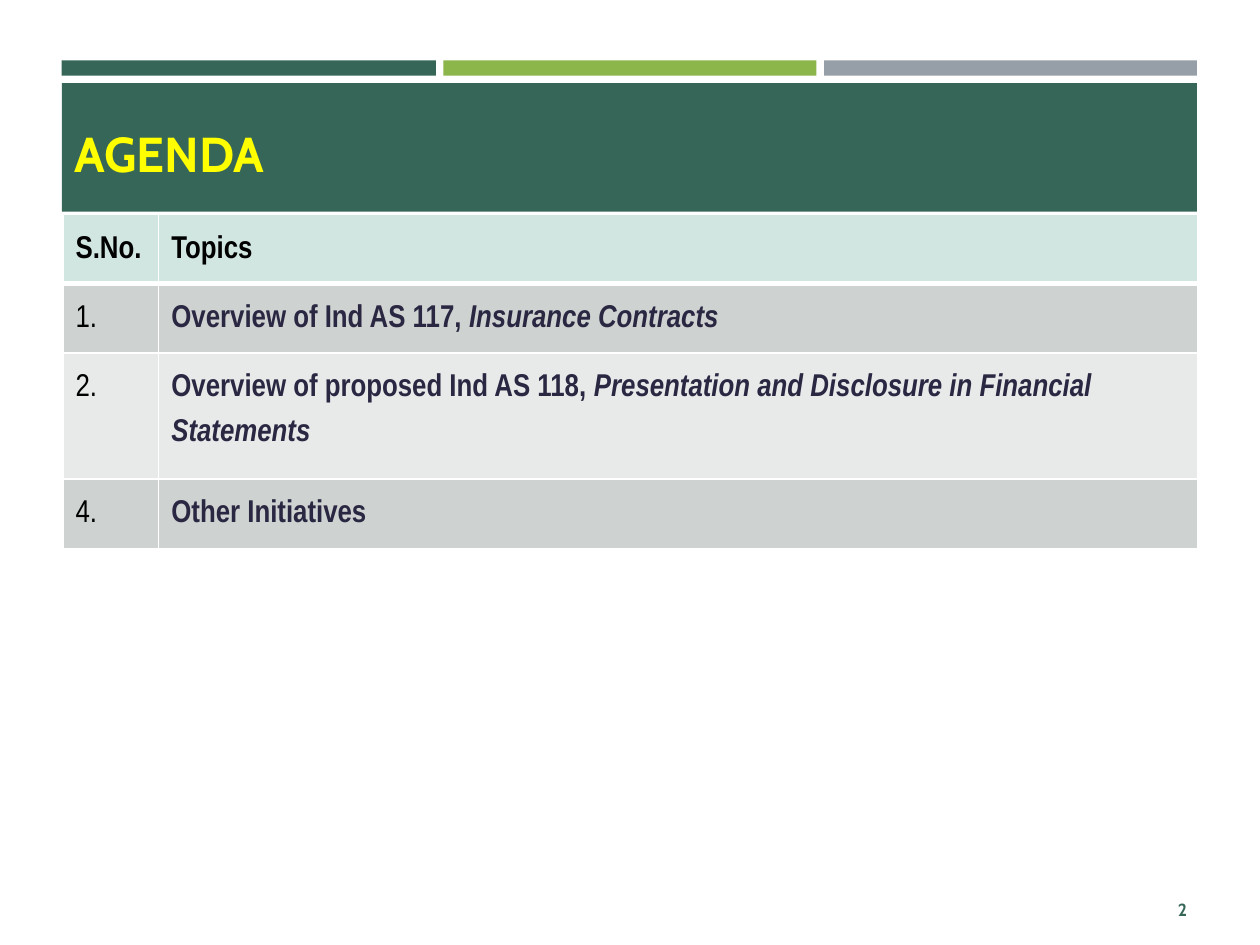
"""Build the agenda slide with a banner title and a table of topics."""
from lxml import etree
from pptx import Presentation
from pptx.dml.color import RGBColor
from pptx.enum.shapes import MSO_SHAPE
from pptx.enum.text import MSO_ANCHOR, PP_ALIGN
from pptx.oxml.ns import qn
from pptx.util import Inches, Pt

RECTANGLE = MSO_SHAPE.RECTANGLE
MIDDLE = MSO_ANCHOR.MIDDLE
LEFT, RIGHT = PP_ALIGN.LEFT, PP_ALIGN.RIGHT
GREEN = "366658"
NAVY = "2A2742"


def color(value):
    return RGBColor.from_string(value)


def style(font, name, size, value, bold, italic=False):
    font.name = name
    font.size = Pt(size)
    font.color.rgb = color(value)
    font.bold = bold
    font.italic = italic


deck = Presentation()
deck.slide_width, deck.slide_height = Inches(10), Inches(7.5)
page = deck.slides.add_slide(deck.slide_layouts[5])

bands = [
    (0.49, 0.48, 2.97, 0.12, GREEN),
    (3.52, 0.48, 2.96, 0.12, "8CB64A"),
    (6.54, 0.48, 2.96, 0.12, "969FA7"),
    (0.49, 0.66, 9.01, 1.02, GREEN),
]
for left, top, width, height, fill in bands:
    band = page.shapes.add_shape(RECTANGLE, Inches(left), Inches(top), Inches(width), Inches(height))
    band.shadow.inherit = False
    band.fill.solid()
    band.fill.fore_color.rgb = color(fill)
    band.line.fill.background()

title = page.shapes.title
band.element.addnext(title.element)
title.left, title.top = Inches(0.49), Inches(0.75)
title.width, title.height = Inches(7.79), Inches(0.93)
number = page.shapes.add_textbox(Inches(8.68), Inches(7.02), Inches(0.84), Inches(0.4))
labels = [
    (title, "AGENDA", 28, "FFFF00", LEFT),
    (number, "2", 10, GREEN, RIGHT),
]
for box, text, size, value, alignment in labels:
    frame = box.text_frame
    frame.text = text
    frame.word_wrap = True
    frame.vertical_anchor = MIDDLE
    para = frame.paragraphs[0]
    para.alignment = alignment
    style(para.runs[0].font, "Cabin", size, value, True)

topics = [
    ("S.No.", ["Topics"], 0.5, "D1E6E0"),
    ("1.", ["Overview of Ind AS 117, ", "Insurance Contracts"], 0.5, "CED3D1"),
    ("2.", ["Overview of proposed Ind AS 118, ",
            "Presentation and Disclosure in Financial Statements"], 0.8, "E8EAEA"),
    ("4.", ["Other Initiatives"], 0.5, "CED3D1"),
]
table = page.shapes.add_table(len(topics), 2, Inches(0.5), Inches(1.7), Inches(9.01), Inches(2.3)).table
table.columns[0].width = Inches(0.76)
table.columns[1].width = Inches(8.25)

for row, (serial, parts, height, fill) in enumerate(topics):
    table.rows[row].height = Inches(height)
    header = row == 0
    for column, texts in enumerate([[serial], parts]):
        cell = table.cell(row, column)
        para = cell.text_frame.paragraphs[0]
        para.line_spacing = 1.5
        for index, text in enumerate(texts):
            span = para.add_run()
            span.text = text
            value = NAVY if column and not header else "000000"
            style(span.font, "Arial Narrow", 18, value, header or column == 1, index == 1)

        borders = {"a:lnL": 1, "a:lnR": 1, "a:lnT": 3 if row == 1 else 1, "a:lnB": 3 if header else 1}
        properties = cell._tc.get_or_add_tcPr()
        for tag, points in borders.items():
            line = etree.SubElement(properties, qn(tag), w=str(Pt(points)))
            solid = etree.SubElement(line, qn("a:solidFill"))
            etree.SubElement(solid, qn("a:srgbClr"), val="FFFFFF")
        cell.fill.solid()
        cell.fill.fore_color.rgb = color(fill)

deck.save("out.pptx")
